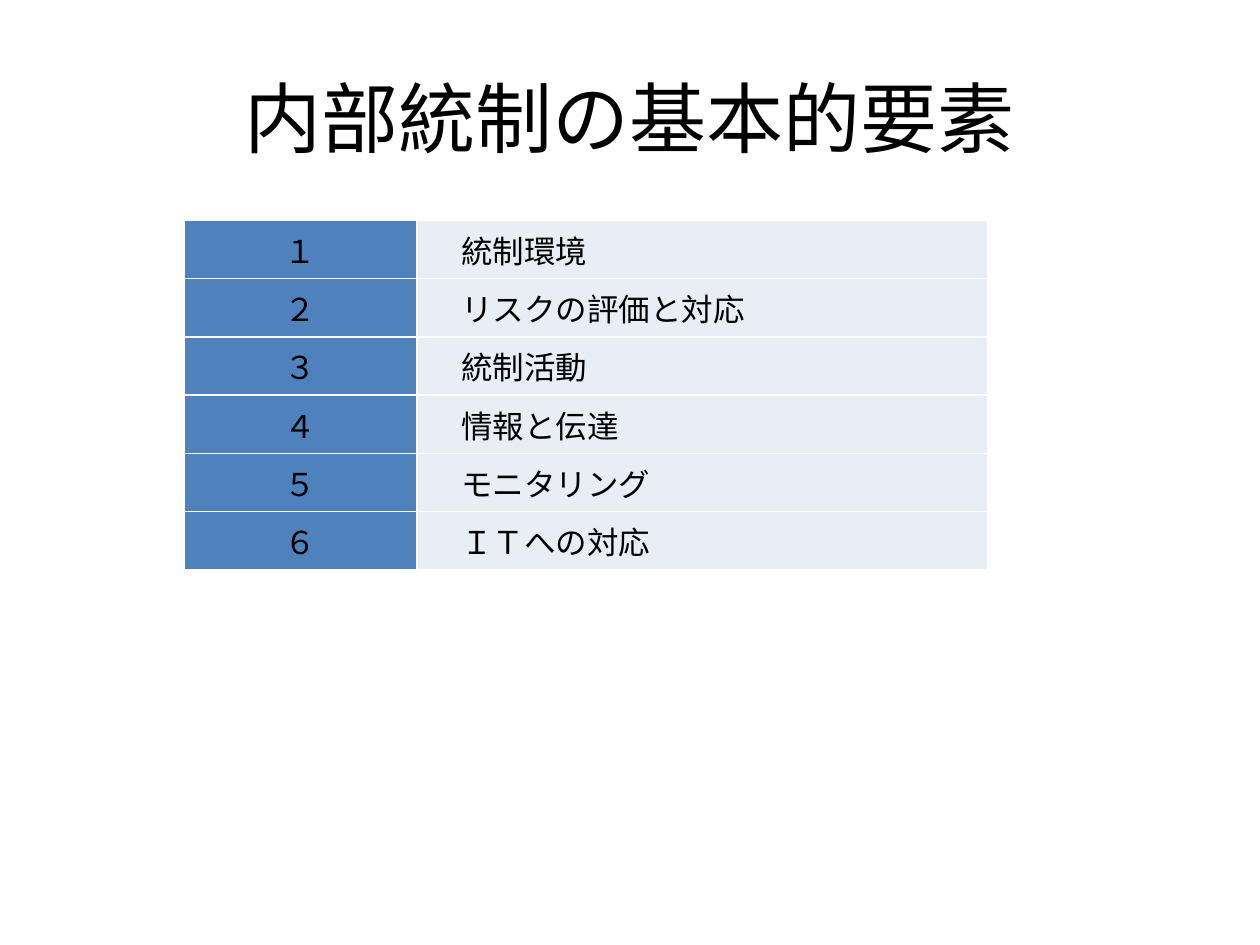
from dataclasses import dataclass

import pptx
import pptx.dml.color
import pptx.enum.text
import pptx.oxml
import pptx.oxml.ns
import pptx.util

Inches = pptx.util.Inches
Pt = pptx.util.Pt
Align = pptx.enum.text.PP_ALIGN
Anchor = pptx.enum.text.MSO_ANCHOR

FONT = "Calibri"
BLACK = "000000"
WHITE = "FFFFFF"


@dataclass(frozen=True)
class Column:
    width: float
    fill: str
    align: Align
    margin_left: float


NUMBER = Column(1.85, "4F81BD", Align.CENTER, 0.1)
ELEMENT = Column(4.53, "E9EDF4", Align.LEFT, 0.35)
COLUMNS = (NUMBER, ELEMENT)
ROW_HEIGHT = 0.405

ELEMENTS = [
    ("１", "統制環境"),
    ("２", "リスクの評価と対応"),
    ("３", "統制活動"),
    ("４", "情報と伝達"),
    ("５", "モニタリング"),
    ("６", "ＩＴへの対応"),
]


def rgb(value: str) -> pptx.dml.color.RGBColor:
    return pptx.dml.color.RGBColor.from_string(value)


def write(tf, text: str, *, size: float, color: str = BLACK,
          align: Align = Align.LEFT) -> None:
    p = tf.paragraphs[0]
    p.alignment = align
    r = p.add_run()
    r.text = text
    r.font.name = FONT
    r.font.size = Pt(size)
    r.font.color.rgb = rgb(color)


def set_borders(cell, color: str, width: float) -> None:
    """Line all four sides; the lines must come before the fill in tcPr."""
    tc_pr = cell._tc.get_or_add_tcPr()
    for i, side in enumerate(("lnL", "lnR", "lnT", "lnB")):
        tc_pr.insert(i, pptx.oxml.parse_xml(
            f'<a:{side} {pptx.oxml.ns.nsdecls("a")} w="{Pt(width)}">'
            f'<a:solidFill><a:srgbClr val="{color}"/></a:solidFill></a:{side}>'))


def add_title(slide, text: str) -> None:
    sp = slide.shapes.title
    sp.left, sp.top = Inches(0.5), Inches(0.3)
    sp.width, sp.height = Inches(9), Inches(1.25)
    sp.text_frame.vertical_anchor = Anchor.MIDDLE
    write(sp.text_frame, text, size=44, align=Align.CENTER)


def add_elements_table(slide, left: float, top: float) -> None:
    width = sum(column.width for column in COLUMNS)
    table = slide.shapes.add_table(
        len(ELEMENTS), len(COLUMNS), Inches(left), Inches(top),
        Inches(width), Inches(ROW_HEIGHT * len(ELEMENTS))).table
    table.first_row = False
    table.horz_banding = False
    for c, column in enumerate(COLUMNS):
        table.columns[c].width = Inches(column.width)
        for r, texts in enumerate(ELEMENTS):
            cell = table.cell(r, c)
            cell.margin_left = Inches(column.margin_left)
            cell.fill.solid()
            cell.fill.fore_color.rgb = rgb(column.fill)
            set_borders(cell, WHITE, 1)
            write(cell.text_frame, texts[c], size=18, align=column.align)


def main() -> None:
    prs = pptx.Presentation()
    prs.slide_width, prs.slide_height = Inches(10), Inches(7.5)
    slide = prs.slides.add_slide(prs.slide_layouts.get_by_name("Title Only"))
    add_title(slide, "内部統制の基本的要素")
    add_elements_table(slide, 1.46, 1.75)
    prs.save("out.pptx")


if __name__ == "__main__":
    main()
